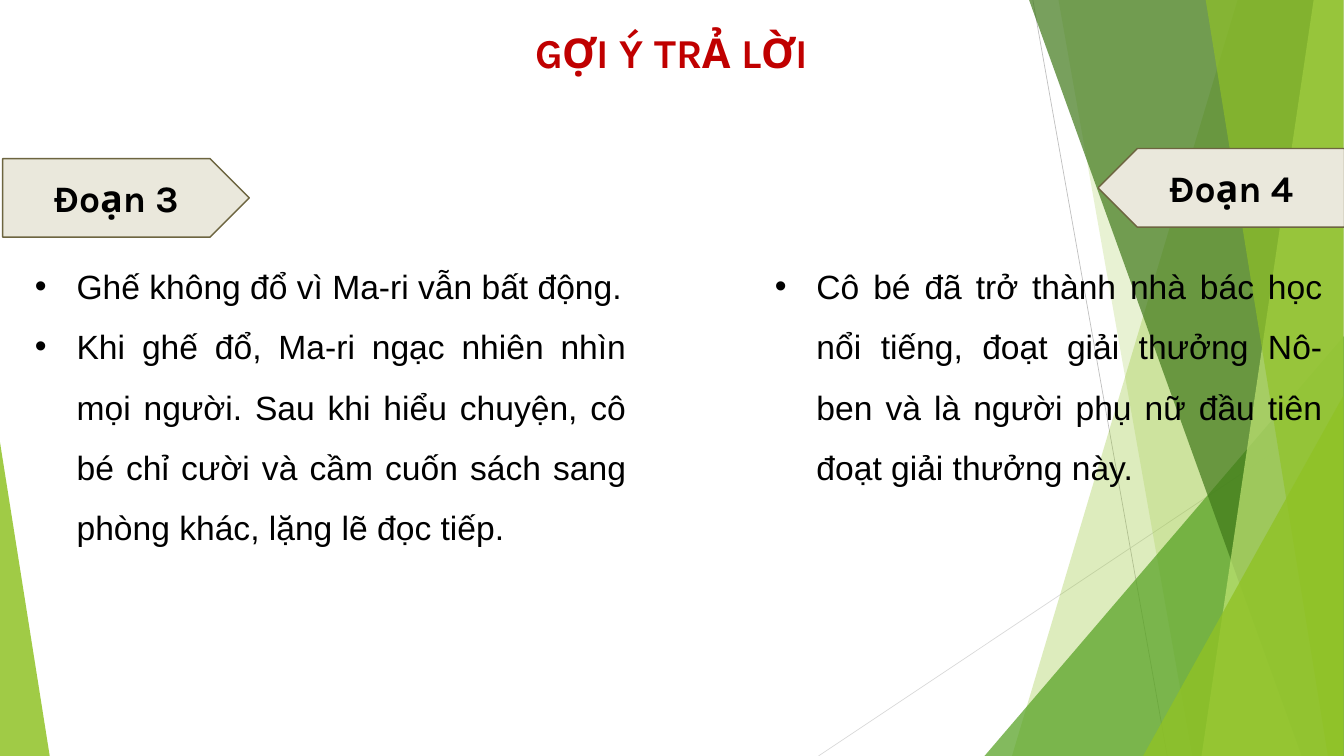
from typing import NamedTuple

from pptx import Presentation
from pptx import util as u
from pptx.dml.color import RGBColor
from pptx.enum import shapes, text
from pptx.oxml import ns, xmlchemy as xml

LIME = RGBColor(0x90, 0xC2, 0x26)
LEAF = RGBColor(0x54, 0xA0, 0x21)
MOSS = RGBColor(0x3F, 0x78, 0x19)
PALE = RGBColor(0xC0, 0xE4, 0x74)
GREY = RGBColor(0xBF, 0xBF, 0xBF)
MIST = RGBColor(0xD9, 0xD9, 0xD9)
SAND = RGBColor(0xEA, 0xE8, 0xDC)
BROWN = RGBColor(0x6D, 0x65, 0x40)
RED = RGBColor(0xC0, 0x00, 0x00)
BLACK = RGBColor(0x00, 0x00, 0x00)
WIDE, HIGH = 20, 11.25
TOP = -0.01


class Box(NamedTuple):
    left: float
    top: float
    width: float
    height: float


class Ray(NamedTuple):
    start: tuple
    end: tuple
    color: RGBColor


class Band(NamedTuple):
    top: float
    base: float
    edge: float
    color: RGBColor
    alpha: int


class Peak(NamedTuple):
    box: Box
    tip: float
    color: RGBColor
    alpha: int


class Tag(NamedTuple):
    label: str
    left: float
    top: float
    flip: bool


class Notes(NamedTuple):
    box: Box
    lines: tuple


RAYS = (
    Ray((15.37, 0), (17.37, HIGH), GREY),
    Ray((19.99, 6.04), (12.18, HIGH), MIST),
)
DECOR = (
    Band(18.42, 15.06, 19.99, LIME, 30),
    Band(15.75, 17.74, 20, LIME, 20),
    Peak(Box(14.65, 5, 5.35, 6.25), 1, LEAF, 72),
    Band(15.31, 19.37, 19.99, MOSS, 70),
    Band(19.55, 17.88, 19.99, PALE, 70),
    Band(17.94, 19.76, 19.99, LIME, 65),
    Peak(Box(17.01, 5.89, 2.98, 5.36), 1, LIME, 80),
    Peak(Box(0, 6.58, 0.74, 4.67), 0, LIME, 85),
)
TAGS = (
    Tag("Đoạn 3", 0.04, 2.36, False),
    Tag("Đoạn 4", 16.34, 2.21, True),
)
NOTES = (
    Notes(Box(0.42, 3.6, 9, 4.53), (
        "Ghế không đổ vì Ma-ri vẫn bất động.",
        "Khi ghế đổ, Ma-ri ngạc nhiên nhìn mọi người. Sau khi hiểu chuyện, "
        "cô bé chỉ cười và cầm cuốn sách sang phòng khác, lặng lẽ đọc tiếp.",
    )),
    Notes(Box(11.43, 3.6, 8.35, 3.62), (
        "Cô bé đã trở thành nhà bác học nổi tiếng, đoạt giải thưởng Nô-ben "
        "và là người phụ nữ đầu tiên đoạt giải thưởng này.",
    )),
)


def scale(vals) -> list:
    return [u.Inches(val) for val in vals]


def child(node, name: str, **attrs: str) -> None:
    item = xml.OxmlElement(name)
    for key, val in attrs.items():
        item.set(key, val)
    node.append(item)


def tint(shape, color: RGBColor, alpha: int) -> None:
    shape.shadow.inherit = False
    shape.fill.solid()
    shape.fill.fore_color.rgb = color
    shape.line.fill.background()
    for node in shape.element.spPr.iter(ns.qn("a:srgbClr")):
        child(node, "a:alpha", val=str(alpha * 1000))


def style(frame, size: int, font: str, color: RGBColor, bold: bool, align) -> None:
    for para in frame.paragraphs:
        para.alignment = align
        for run in para.runs:
            run.font.size = u.Pt(size)
            run.font.name = font
            run.font.bold = bold
            run.font.color.rgb = color


def draw_ray(slide, ray: Ray) -> None:
    line = slide.shapes.add_connector(
        shapes.MSO_CONNECTOR.STRAIGHT, *scale(ray.start + ray.end))
    line.line.color.rgb = ray.color
    line.line.width = u.Pt(0.75)
    child(line.element.spPr, "a:effectLst")


def draw_band(slide, band: Band) -> None:
    start, *rest = [scale(spot) for spot in (
        (band.top, TOP), (band.edge, TOP), (band.edge, HIGH), (band.base, HIGH))]
    form = slide.shapes.build_freeform(*start)
    form.add_line_segments(rest, close=True)
    tint(form.convert_to_shape(), band.color, band.alpha)


def draw_peak(slide, peak: Peak) -> None:
    shape = slide.shapes.add_shape(
        shapes.MSO_SHAPE.ISOSCELES_TRIANGLE, *scale(peak.box))
    shape.adjustments[0] = peak.tip
    tint(shape, peak.color, peak.alpha)


def draw_tag(slide, tag: Tag) -> None:
    shape = slide.shapes.add_shape(
        shapes.MSO_SHAPE.PENTAGON, *scale((tag.left, tag.top, 3.67, 1.17)))
    tint(shape, SAND, 100)
    shape.line.color.rgb = BROWN
    shape.line.width = u.Pt(1.5)
    if tag.flip:
        shape.element.spPr.xfrm.set("flipH", "1")
    frame = shape.text_frame
    frame.text = tag.label
    frame.vertical_anchor = text.MSO_ANCHOR.MIDDLE
    style(frame, 40, "Karla", BLACK, True, text.PP_ALIGN.CENTER)


def place(holder, box: Box, words: str):
    holder.left, holder.top, holder.width, holder.height = scale(box)
    holder.element.getparent().append(holder.element)
    frame = holder.text_frame
    frame.text = words
    frame.word_wrap = True
    frame.auto_size = text.MSO_AUTO_SIZE.SHAPE_TO_FIT_TEXT
    frame.vertical_anchor = text.MSO_ANCHOR.TOP
    for para in frame.paragraphs:
        para.line_spacing = 1.5
        para.space_before = u.Pt(0)
    return frame


def fill_notes(holder, notes: Notes) -> None:
    frame = place(holder, notes.box, "\n".join(notes.lines))
    style(frame, 36, "Arial", BLACK, False, text.PP_ALIGN.JUSTIFY)
    for props in holder.element.iter(ns.qn("a:pPr")):
        props.set("marL", str(u.Inches(0.62)))
        props.set("indent", str(u.Inches(-0.62)))
        child(props, "a:buFont", typeface="Arial")
        child(props, "a:buChar", char="•")


def main() -> None:
    deck = Presentation()
    deck.slide_width, deck.slide_height = scale((WIDE, HIGH))
    slide = deck.slides.add_slide(deck.slide_layouts[3])
    title, *bodies = list(slide.placeholders)
    for ray in RAYS:
        draw_ray(slide, ray)
    for part in DECOR:
        if isinstance(part, Band):
            draw_band(slide, part)
        else:
            draw_peak(slide, part)
    frame = place(title, Box(5.98, TOP, 8.03, 1.07), "GỢI Ý TRẢ LỜI")
    style(frame, 44, "Karla", RED, True, text.PP_ALIGN.CENTER)
    for tag, body, notes in zip(TAGS, bodies, NOTES):
        draw_tag(slide, tag)
        fill_notes(body, notes)
    deck.save("out.pptx")


if __name__ == "__main__":
    main()
